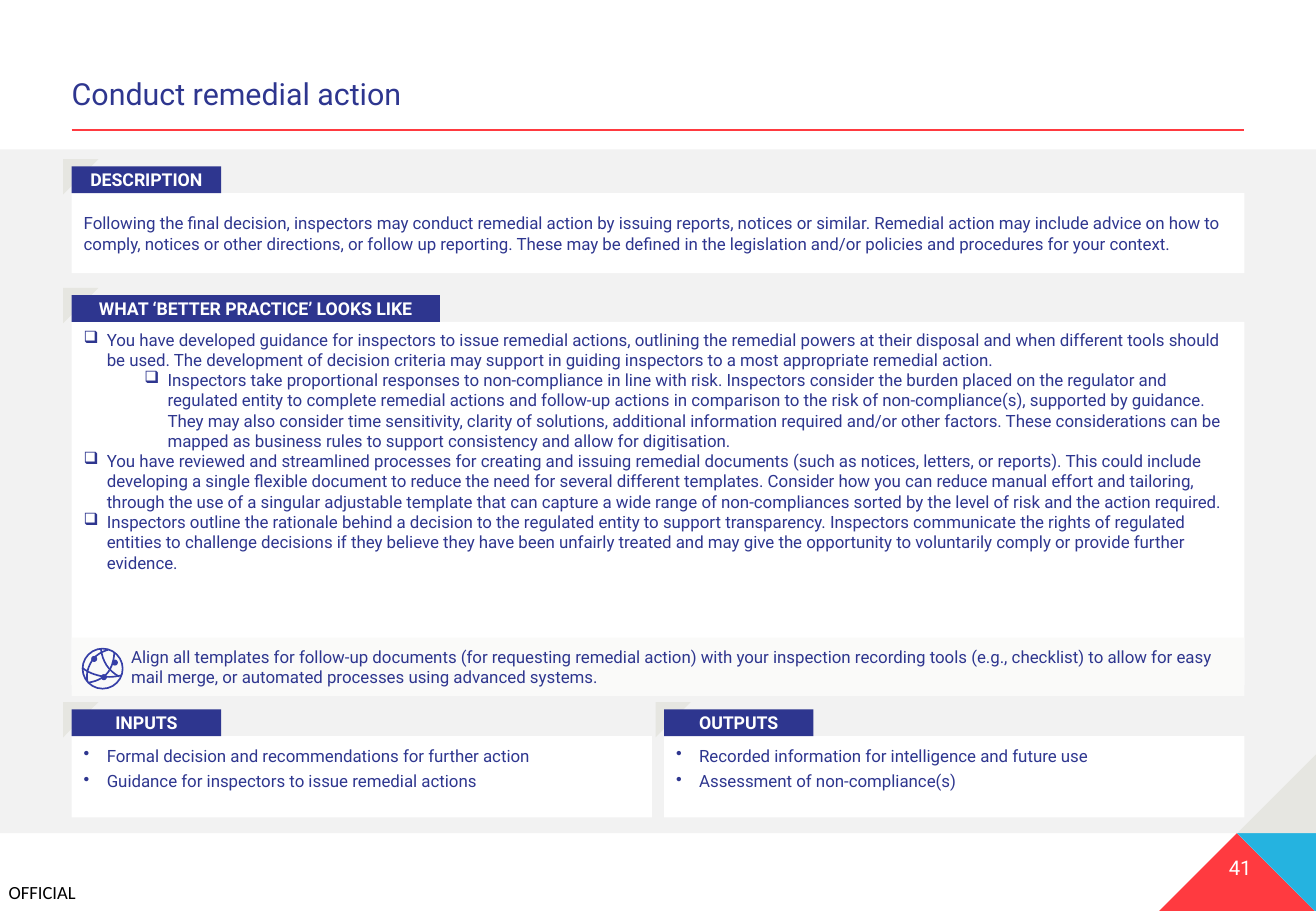
import lxml.etree
import pptx
import pptx.dml.color
import pptx.enum.shapes
import pptx.enum.text
import pptx.oxml.ns
import pptx.util

Inches = pptx.util.Inches
Pt = pptx.util.Pt
SHAPE = pptx.enum.shapes.MSO_SHAPE
ALIGN = pptx.enum.text.PP_ALIGN
ANCHOR = pptx.enum.text.MSO_ANCHOR
NAVY, RED, WHITE, STONE = "2E368F", "FF3A40", "FFFFFF", "E6E6E1"
ICON_BLUE = "363FA7"
LEFT, WIDTH, GAP = 0.59, 9.65, 0.1
BODY = {"size": Pt(10), "name": "Roboto", "color": NAVY}
LABEL = {"size": Pt(10.5), "name": "Roboto", "color": WHITE, "bold": True}
TITLE = {"size": Pt(18), "name": "Roboto", "color": NAVY}
NUMBER = {"size": Pt(12), "name": "Roboto", "color": WHITE}
MARKING = {"size": Pt(11), "name": "Calibri", "color": "000000"}


def rgb(value):
    return pptx.dml.color.RGBColor.from_string(value)


def paint(sp, fill=None, line=None, weight=1):
    sp.shadow.inherit = False
    if fill:
        sp.fill.solid()
        sp.fill.fore_color.rgb = rgb(fill)
    else:
        sp.fill.background()
    if line:
        sp.line.color.rgb = rgb(line)
        sp.line.width = Pt(weight)
    else:
        sp.line.fill.background()
    return sp


def add_block(s, kind, box, fill=None, line=None):
    sp = s.shapes.add_shape(kind, *map(Inches, box))
    return paint(sp, fill, line)


def add_path(s, points, closed, **look):
    dots = [(Inches(x), Inches(y)) for x, y in points]
    builder = s.shapes.build_freeform(*dots[0])
    builder.add_line_segments(dots[1:], close=closed)
    return paint(builder.convert_to_shape(), **look)


def set_bullet(p, char, left, hanging):
    ppr = p._p.get_or_add_pPr()
    ppr.set("marL", str(Inches(left)))
    ppr.set("indent", str(Inches(hanging)))
    if char:
        bu = lxml.etree.SubElement(ppr, pptx.oxml.ns.qn("a:buChar"))
        bu.set("char", char)


def write(sp, items, style, align=ALIGN.LEFT, anchor=ANCHOR.TOP,
          insets=(0.1, 0.05, 0.1, 0.05), wrap=True, bullet=None, indents=None, spacing=None):
    tf = sp.text_frame
    left, top, right, bottom = map(Inches, insets)
    frame = {"word_wrap": wrap, "vertical_anchor": anchor, "margin_left": left,
             "margin_top": top, "margin_right": right, "margin_bottom": bottom}
    for key, value in frame.items():
        setattr(tf, key, value)
    for i, text in enumerate(items):
        p = tf.paragraphs[0] if i == 0 else tf.add_paragraph()
        if indents:
            set_bullet(p, bullet, *indents[i])
        for key, value in {"alignment": align, **(spacing or {})}.items():
            setattr(p, key, value)
        r = p.add_run()
        r.text = text
        for key, value in style.items():
            if key == "color":
                r.font.color.rgb = rgb(value)
            else:
                setattr(r.font, key, value)


def add_text(s, box, text, style, **options):
    write(s.shapes.add_textbox(*map(Inches, box)), [text], style, **options)


def add_panel(s, box, label, items, label_width=1.23, **options):
    left, top, _, _ = box
    write(add_block(s, SHAPE.RECTANGLE, box, WHITE), items, BODY, **options)
    corner = add_block(s, SHAPE.HALF_FRAME, (left - 0.07, top - 0.28, 0.29, 0.29), STONE)
    for i in range(2):
        corner.adjustments[i] = 0.238
    tab = add_block(s, SHAPE.RECTANGLE, (left, top - 0.22, label_width, 0.22), NAVY)
    write(tab, [label], LABEL, align=ALIGN.CENTER, anchor=ANCHOR.MIDDLE)


def add_backdrop(s, box):
    left, top, width, height = box
    right, bottom, size = left + width, top + height, 0.65
    mid = right - size
    add_block(s, SHAPE.RECTANGLE, box, "F2F2F2")
    add_path(s, [(mid, bottom), (mid - size, bottom + size), (right, bottom + size)], True, fill=RED)
    add_path(s, [(right, bottom), (mid, bottom), (right, bottom + size)], True, fill="25B3E0")
    add_path(s, [(right, bottom - size), (mid, bottom), (right, bottom)], True, fill=STONE)
    add_text(s, (mid - 0.75, bottom + 0.13, 0.87, 0.3), "41", NUMBER,
             align=ALIGN.RIGHT, insets=(0, 0.05, 0, 0.05))
    add_text(s, (0.07, bottom + 0.39, 0.59, 0.18), "OFFICIAL", MARKING,
             insets=(0, 0, 0, 0), wrap=False)


def add_header(s, box, text):
    left, top, width, height = box
    add_text(s, box, text, TITLE, anchor=ANCHOR.BOTTOM, insets=(0, 0.05, 0, 0.05),
             spacing={"line_spacing": 0.9})
    y = Inches(top + height + 0.1)
    rule = s.shapes.add_connector(pptx.enum.shapes.MSO_CONNECTOR.STRAIGHT,
                                  Inches(left), y, Inches(left + width), y)
    rule.line.color.rgb = rgb(RED)
    rule.line.width = Pt(1.25)
    lxml.etree.SubElement(rule._element.spPr, pptx.oxml.ns.qn("a:effectLst"))


def add_globe(s, box):
    left, top, size, _ = box
    add_block(s, SHAPE.OVAL, (left + 0.01, top + 0.01, size - 0.02, size - 0.02), line=ICON_BLUE)
    nodes = [(0.1, 0.09), (0.27, 0.12), (0.18, 0.24)]
    curves = [[(0.16, 0.01), (0.18, 0.17), (0.31, 0.24)],
              [(0.01, 0.17), (0.07, 0.22), nodes[2]],
              [nodes[0], (0.03, 0.19), (0.05, 0.28)],
              [nodes[0], (0.15, 0.04), (0.22, 0.02)],
              [(0.27, 0.04), nodes[1], (0.23, 0.19)],
              [(0.23, 0.19), (0.18, 0.27), (0.06, 0.29)],
              [nodes[2], (0.25, 0.25), (0.33, 0.23)]]
    steps = [i / 8 for i in range(9)]
    for a, b, c in curves:
        points = [(left + (1 - t) ** 2 * a[0] + 2 * t * (1 - t) * b[0] + t * t * c[0],
                   top + (1 - t) ** 2 * a[1] + 2 * t * (1 - t) * b[1] + t * t * c[1])
                  for t in steps]
        add_path(s, points, False, line=ICON_BLUE)
    for x, y in nodes:
        add_block(s, SHAPE.OVAL, (left + x - 0.02, top + y - 0.02, 0.05, 0.05), ICON_BLUE)


def add_tip(s, box, text):
    left, top, _, _ = box
    write(add_block(s, SHAPE.RECTANGLE, box, "FAFAF9"), [text], BODY, anchor=ANCHOR.MIDDLE,
          insets=(0.1, 0.08, 0.1, 0.08), indents=[(0.39, 0)], spacing={"space_after": Pt(3)})
    add_globe(s, (left + 0.08, top + 0.08, 0.35, 0.35))


PRACTICES = [
    "You have developed guidance for inspectors to issue remedial actions, outlining the remedial powers at their disposal and when different tools should be used. The development of decision criteria may support in guiding inspectors to a most appropriate remedial action.",
    "Inspectors take proportional responses to non-compliance in line with risk. Inspectors consider the burden placed on the regulator and regulated entity to complete remedial actions and follow-up actions in comparison to the risk of non-compliance(s), supported by guidance. They may also consider time sensitivity, clarity of solutions, additional information required and/or other factors. These considerations can be mapped as business rules to support consistency and allow for digitisation.",
    "You have reviewed and streamlined processes for creating and issuing remedial documents (such as notices, letters, or reports). This could include developing a single flexible document to reduce the need for several different templates. Consider how you can reduce manual effort and tailoring, through the use of a singular adjustable template that can capture a wide range of non-compliances sorted by the level of risk and the action required.",
    "Inspectors outline the rationale behind a decision to the regulated entity to support transparency. Inspectors communicate the rights of regulated entities to challenge decisions if they believe they have been unfairly treated and may give the opportunity to voluntarily comply or provide further evidence.",
]
DESCRIPTION = "Following the final decision, inspectors may conduct remedial action by issuing reports, notices or similar. Remedial action may include advice on how to comply, notices or other directions, or follow up reporting. These may be defined in the legislation and/or policies and procedures for your context."
TIP = "Align all templates for follow-up documents (for requesting remedial action) with your inspection recording tools (e.g., checklist) to allow for easy mail merge, or automated processes using advanced systems."
FLOWS = {
    "INPUTS": ["Formal decision and recommendations for further action",
               "Guidance for inspectors to issue remedial actions"],
    "OUTPUTS": ["Recorded information for intelligence and future use",
                "Assessment of non-compliance(s)"],
}


def main():
    prs = pptx.Presentation()
    prs.slide_width, prs.slide_height = Inches(10.83), Inches(7.5)
    s = prs.slides.add_slide(prs.slide_layouts[6])
    add_backdrop(s, (0, 1.23, 10.83, 5.63))
    add_header(s, (LEFT, 0.59, WIDTH, 0.38), "Conduct remedial action")
    add_panel(s, (LEFT, 1.59, WIDTH, 0.66), "DESCRIPTION", [DESCRIPTION], anchor=ANCHOR.MIDDLE,
              spacing={"space_after": Pt(3)})
    outer, inner = (0.19, -0.19), (0.69, -0.19)
    add_panel(s, (LEFT, 2.65, WIDTH, 2.99), "WHAT ‘BETTER PRACTICE’ LOOKS LIKE", PRACTICES,
              label_width=3.03, insets=(0.1, 0.06, 0.1, 0.08), bullet="❑",
              indents=[outer, inner, outer, outer])
    add_tip(s, (LEFT, 5.25, WIDTH, 0.48), TIP)
    width = (WIDTH - GAP) / 2
    for i, (label, items) in enumerate(FLOWS.items()):
        add_panel(s, (LEFT + i * (width + GAP), 6.06, width, 0.67), label, items,
                  insets=(0.1, 0.08, 0.1, 0.08), bullet="•", indents=[outer] * len(items),
                  spacing={"space_after": Pt(3)})
    prs.save("out.pptx")


if __name__ == "__main__":
    main()
